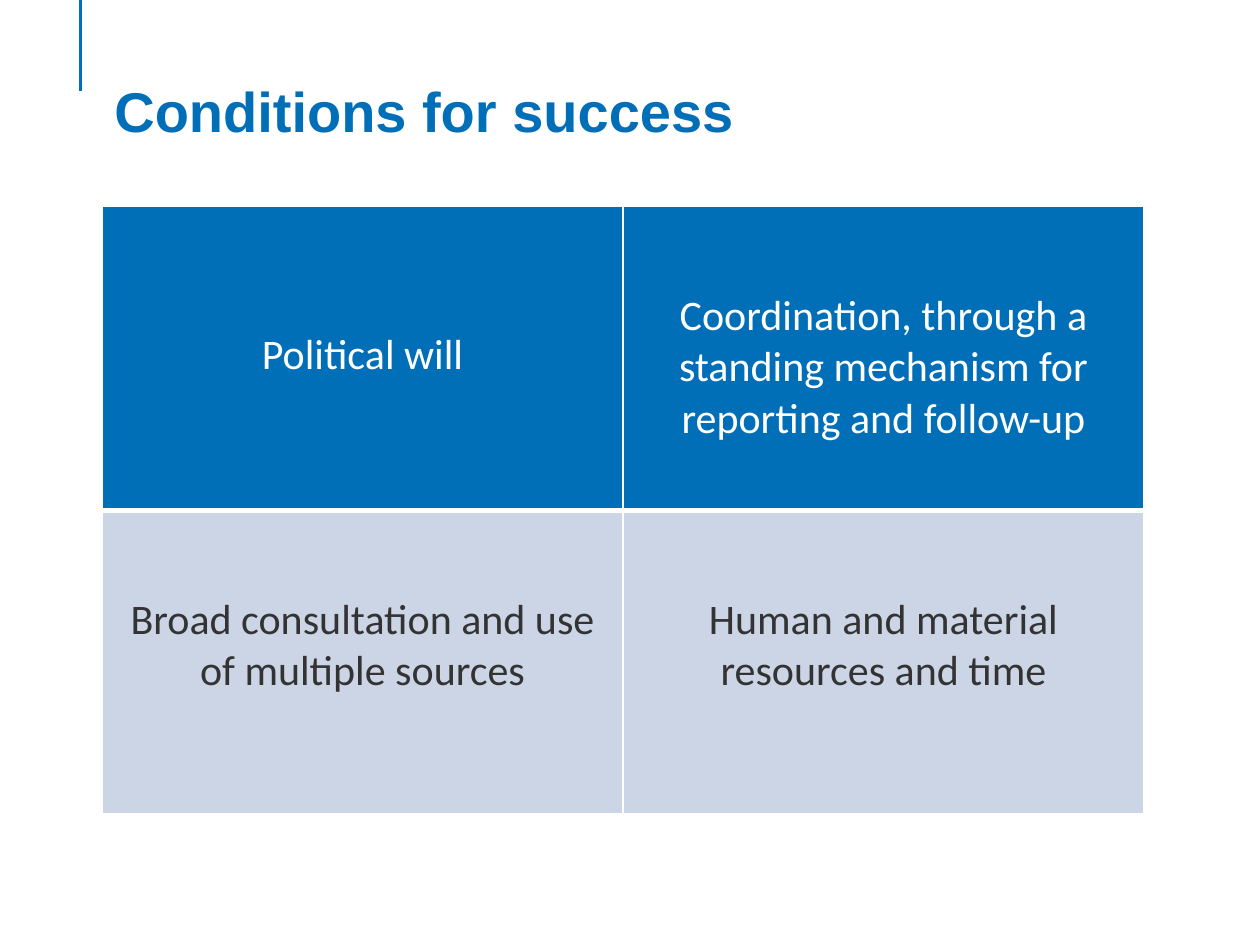
from dataclasses import dataclass

from lxml import etree
from pptx import Presentation
from pptx import util as u
from pptx.dml.color import RGBColor
from pptx.enum import shapes, text
from pptx.oxml.ns import qn

COLORS = {"blue": "006FB7", "pale": "CCD5E6", "dark": "333333", "white": "FFFFFF"}
LEFT, WIDTH = 58.3, 595.4
TABLE_TOP, ROW_HEIGHT = 118.1, 173.5


@dataclass
class Condition:
    wording: str
    top_margin: float = 48


@dataclass
class RowStyle:
    fill: str
    font: str
    bottom_border: float


CONDITIONS = [
    [Condition("Political will", 70),
     Condition("Coordination, through a standing mechanism for reporting and follow-up")],
    [Condition("Broad consultation and use of multiple sources"),
     Condition("Human and material resources and time")],
]
ROW_STYLES = [RowStyle("blue", "white", 3), RowStyle("pale", "dark", 1)]


def rgb(name: str) -> RGBColor:
    return RGBColor.from_string(COLORS[name])


def write_text(frame, wording: str, *, size: float, font: str, color: str,
               bold: bool = False, align=text.PP_ALIGN.LEFT) -> None:
    frame.word_wrap = True
    paragraph = frame.paragraphs[0]
    paragraph.alignment = align
    run = paragraph.add_run()
    run.text = wording
    run.font.size = u.Pt(size)
    run.font.name = font
    run.font.bold = bold
    run.font.color.rgb = rgb(color)


def set_border(cell, side: str, width: float) -> None:
    """Draw a white border; side is L, R, T or B, set in that order before the fill."""
    line = etree.SubElement(cell._tc.get_or_add_tcPr(), qn(f"a:ln{side}"), w=str(u.Pt(width)))
    fill = etree.SubElement(line, qn("a:solidFill"))
    etree.SubElement(fill, qn("a:srgbClr"), val=COLORS["white"])


def draw_accent_line(slide) -> None:
    x = u.Pt(46.1)
    line = slide.shapes.add_connector(shapes.MSO_CONNECTOR.STRAIGHT, x, u.Pt(0), x, u.Pt(51.8))
    line.line.color.rgb = rgb("blue")
    line.line.width = u.Pt(2)
    etree.SubElement(line._element.spPr, qn("a:effectLst"))


def draw_title(slide, wording: str) -> None:
    box = slide.shapes.add_textbox(u.Pt(LEFT), u.Pt(37.4), u.Pt(WIDTH), u.Pt(69.8))
    box.text_frame.margin_top = u.Pt(6.5)
    write_text(box.text_frame, wording, size=32, font="Arial", color="blue", bold=True)


def draw_conditions(slide) -> None:
    rows, columns = len(CONDITIONS), len(CONDITIONS[0])
    table = slide.shapes.add_table(rows, columns, u.Pt(LEFT), u.Pt(TABLE_TOP),
                                   u.Pt(WIDTH), u.Pt(rows * ROW_HEIGHT)).table
    for row, (conditions, style) in enumerate(zip(CONDITIONS, ROW_STYLES)):
        for column, condition in enumerate(conditions):
            cell = table.cell(row, column)
            cell.margin_top = u.Pt(condition.top_margin)
            for side in "LRT":
                set_border(cell, side, 1)
            set_border(cell, "B", style.bottom_border)
            cell.fill.solid()
            cell.fill.fore_color.rgb = rgb(style.fill)
            write_text(cell.text_frame, condition.wording, size=24, font="Calibri",
                       color=style.font, align=text.PP_ALIGN.CENTER)


def main() -> None:
    presentation = Presentation()
    presentation.slide_width, presentation.slide_height = u.Pt(720), u.Pt(540)
    slide = presentation.slides.add_slide(presentation.slide_layouts[6])
    draw_accent_line(slide)
    draw_title(slide, "Conditions for success")
    draw_conditions(slide)
    presentation.save("out.pptx")


if __name__ == "__main__":
    main()
